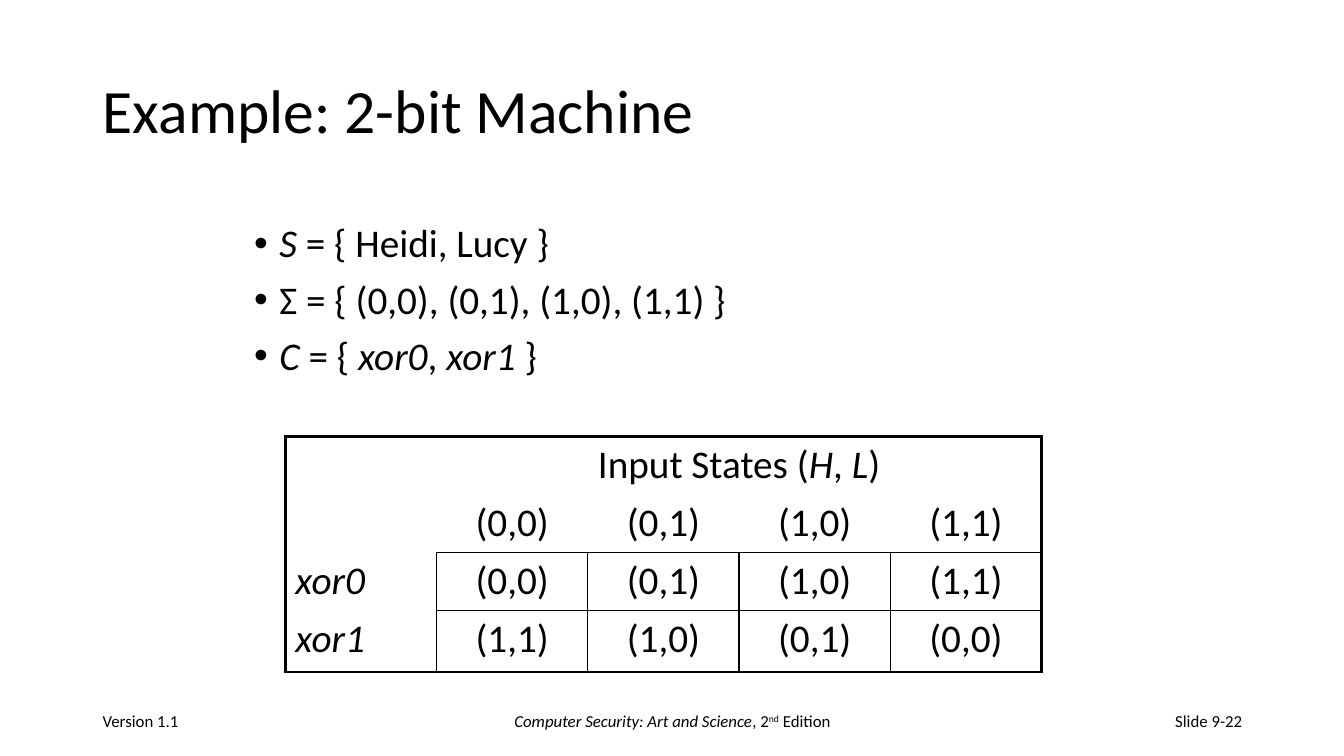
from lxml import etree
from pptx import Presentation
from pptx.dml.color import RGBColor
from pptx.enum.text import MSO_ANCHOR, MSO_AUTO_SIZE, PP_ALIGN
from pptx.oxml import parse_xml
from pptx.oxml.ns import nsdecls, qn
from pptx.util import Inches, Pt

LEFT, CENTER, RIGHT = PP_ALIGN.LEFT, PP_ALIGN.CENTER, PP_ALIGN.RIGHT
MIDDLE, NO_FIT = MSO_ANCHOR.MIDDLE, MSO_AUTO_SIZE.NONE
BLACK = "000000"
FONT = "Calibri"
WIDTH, HEIGHT = 13.33, 7.5
MARGIN = 0.92
NO_STYLE = "{2D5ABB26-0587-4C30-8999-92F81FD0307C}"


def write(para, text, size=28, align=LEFT, raised=None):
    para.alignment = align
    for index, part in enumerate(text.split("_")):
        if part:
            span = para.add_run()
            span.text = part
            span.font.name = FONT
            span.font.size = Pt(size)
            span.font.italic = index % 2 == 1
            span.font.color.rgb = RGBColor.from_string(BLACK)
            if raised:
                span.font._element.set("baseline", str(raised * 1000))


def place(box, left, top, width, height):
    box.left, box.top = Inches(left), Inches(top)
    box.width, box.height = Inches(width), Inches(height)
    box.text_frame.word_wrap = True
    box.text_frame.auto_size = NO_FIT
    return box.text_frame


deck = Presentation()
deck.slide_width, deck.slide_height = Inches(WIDTH), Inches(HEIGHT)
page = deck.slides.add_slide(deck.slide_layouts[1])

title = place(page.shapes.title, MARGIN, 0.4, WIDTH - 2 * MARGIN, 1.45)
title.vertical_anchor = MIDDLE
title.paragraphs[0].line_spacing = 0.9
write(title.paragraphs[0], "Example: 2-bit Machine", size=44)

definitions = [
    "_S_ = { Heidi, Lucy }",
    "Σ = { (0,0), (0,1), (1,0), (1,1) }",
    "_C_ = { _xor0_, _xor1_ }",
]
body = place(page.placeholders[1], 2.42, 2.17, 8.5, 2.08)
for index, definition in enumerate(definitions):
    para = body.paragraphs[0] if index == 0 else body.add_paragraph()
    properties = para._p.get_or_add_pPr()
    properties.set("marL", str(Inches(0.25)))
    properties.set("indent", str(-Inches(0.25)))
    etree.SubElement(properties, qn("a:buFont"), typeface="Arial")
    etree.SubElement(properties, qn("a:buChar"), char="•")
    para.line_spacing = 0.9
    para.space_before = Pt(10 if index else 0)
    write(para, definition)

rows = [
    ["", "Input States (_H_, _L_)", "", "", ""],
    ["", "(0,0)", "(0,1)", "(1,0)", "(1,1)"],
    ["_xor0_", "(0,0)", "(0,1)", "(1,0)", "(1,1)"],
    ["_xor1_", "(1,1)", "(1,0)", "(0,1)", "(0,0)"],
]
row_count, column_count = len(rows), len(rows[0])
row_heights = [0.53, 0.53, 0.53, 0.61]
frame = page.shapes.add_table(row_count, column_count, Inches(2.83), Inches(4.33),
                              Inches(1.5 * column_count), Inches(sum(row_heights)))
table = frame.table
table.first_row = table.horz_banding = False
table._tbl.tblPr.find(qn("a:tableStyleId")).text = NO_STYLE
table.cell(0, 1).merge(table.cell(0, column_count - 1))
for row, height in zip(table.rows, row_heights):
    row.height = Inches(height)

for row, texts in enumerate(rows):
    for column, text in enumerate(texts):
        cell = table.cell(row, column)
        write(cell.text_frame.paragraphs[0], text, align=CENTER if column else LEFT)
        right = column + (cell.span_width if cell.is_merge_origin else 1)
        edges = [
            ("lnL", column in (0, column_count), row >= 2),
            ("lnR", right in (0, column_count), row >= 2),
            ("lnT", row == 0, row >= 2 and column >= 1),
            ("lnB", row + 1 == row_count, row >= 1 and column >= 1),
        ]
        for tag, outer, inner in edges:
            if outer or inner:
                weight = Pt(2.25 if outer else 1)
                cell._tc.get_or_add_tcPr().append(parse_xml(
                    f'<a:{tag} {nsdecls("a")} w="{weight}"><a:solidFill>'
                    f'<a:srgbClr val="{BLACK}"/></a:solidFill></a:{tag}>'))
        cell.fill.background()

footers = [
    (MARGIN, 3, LEFT, [("Version 1.1", None)]),
    (4.42, 4.5, CENTER, [("_Computer Security: Art and Science_, 2", None),
                         ("nd", 30), (" Edition", None)]),
    (9.42, 3, RIGHT, [("Slide 9-22", None)]),
]
for left, width, align, parts in footers:
    footer = place(page.shapes.add_textbox(0, 0, 0, 0), left, 6.95, width, 0.4)
    footer.vertical_anchor = MIDDLE
    for text, raised in parts:
        write(footer.paragraphs[0], text, size=12, align=align, raised=raised)

deck.save("out.pptx")
